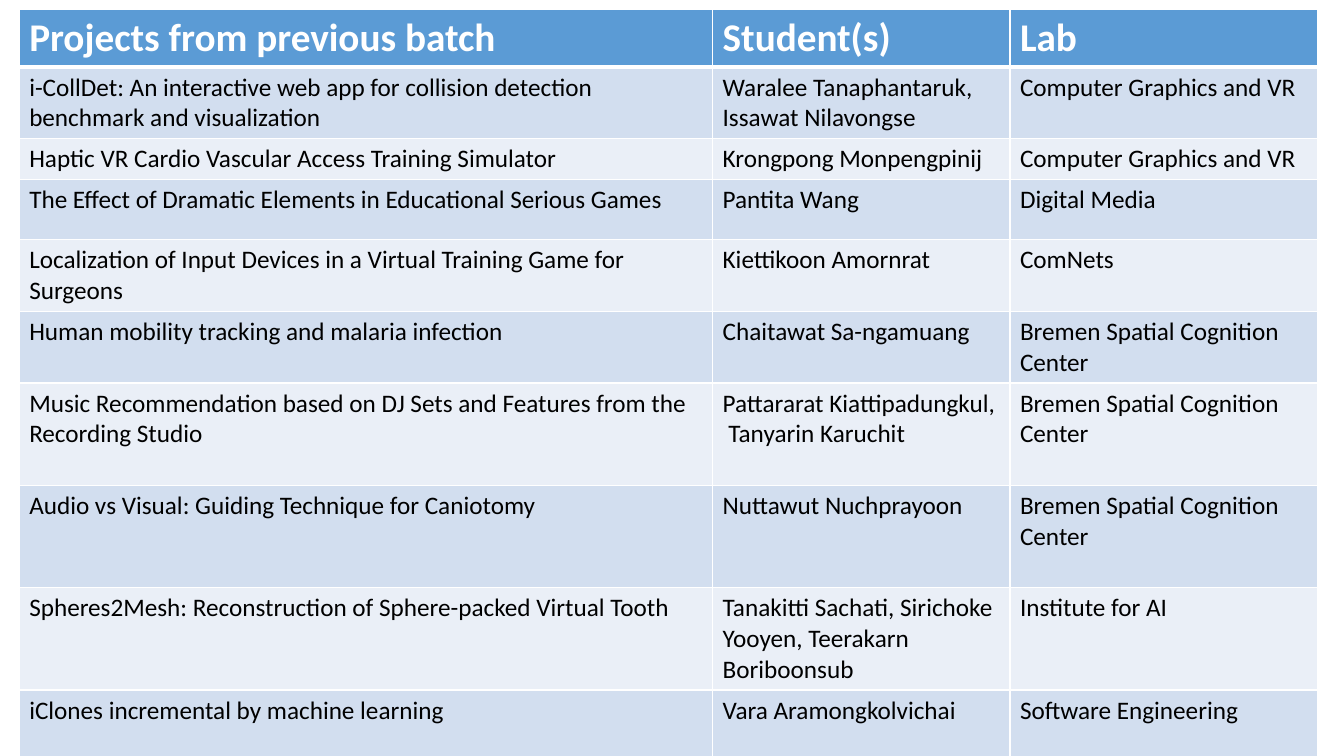
from typing import NamedTuple

from lxml.etree import SubElement
from pptx import Presentation
from pptx.dml.color import RGBColor
from pptx.oxml.ns import qn
from pptx.util import Inches, Pt

WIDTH, HEIGHT = 13.33, 7.5
LEFT, TOP = 0.19, 0.09
SPAN = 12.88
SHARES = (0.534, 0.229, 0.237)
LINE, PAD = 0.305, 0.1  # one text line, and cell margins per row
WHITE, BLACK, BLUE = "FFFFFF", "000000", "5B9BD5"
BANDS = ("D2DEEF", "EAEFF7")


class Project(NamedTuple):
    title: str
    students: str
    lab: str
    lines: float  # row height in text lines


class Look(NamedTuple):
    fill: str
    ink: str
    size: int
    bold: bool
    above: int
    below: int


HEAD = Project("Projects from previous batch", "Student(s)", "Lab", 1.53)
GRAPHICS = "Computer Graphics and VR"
SPATIAL = "Bremen Spatial Cognition Center"
PROJECTS = [
    Project("i-CollDet: An interactive web app for collision detection "
            "benchmark and visualization",
            "Waralee Tanaphantaruk, Issawat Nilavongse", GRAPHICS, 2),
    Project("Haptic VR Cardio Vascular Access Training Simulator",
            "Krongpong Monpengpinij", GRAPHICS, 1),
    Project("The Effect of Dramatic Elements in Educational Serious Games",
            "Pantita Wang", "Digital Media", 1.63),
    Project("Localization of Input Devices in a Virtual Training Game for "
            "Surgeons", "Kiettikoon Amornrat", "ComNets", 2),
    Project("Human mobility tracking and malaria infection",
            "Chaitawat Sa-ngamuang", SPATIAL, 2),
    Project("Music Recommendation based on DJ Sets and Features from the "
            "Recording Studio",
            "Pattararat Kiattipadungkul,  Tanyarin Karuchit", SPATIAL, 3),
    Project("Audio vs Visual: Guiding Technique for Caniotomy",
            "Nuttawut Nuchprayoon", SPATIAL, 3),
    Project("Spheres2Mesh: Reconstruction of Sphere-packed Virtual Tooth",
            "Tanakitti Sachati, Sirichoke Yooyen, Teerakarn Boriboonsub",
            "Institute for AI", 3),
    Project("iClones incremental by machine learning",
            "Vara Aramongkolvichai", "Software Engineering", 2.1),
]


def color(code: str) -> RGBColor:
    return RGBColor.from_string(code)


def border(cell, side: str, points: int) -> None:
    props = cell._tc.get_or_add_tcPr()
    line = SubElement(props, qn(f"a:ln{side}"), w=str(Pt(points)))
    fill = SubElement(line, qn("a:solidFill"))
    SubElement(fill, qn("a:srgbClr"), val=WHITE)


def paint(cell, text: str, look: Look) -> None:
    for side, points in zip("LRTB", (1, 1, look.above, look.below)):
        border(cell, side, points)
    cell.fill.solid()
    cell.fill.fore_color.rgb = color(look.fill)
    cell.text = text
    font = cell.text_frame.paragraphs[0].font
    font.name, font.size, font.bold = "Calibri", Pt(look.size), look.bold
    font.color.rgb = color(look.ink)


def style(index: int) -> Look:
    if index == 0:
        return Look(BLUE, WHITE, 28, True, 1, 3)
    above = 3 if index == 1 else 1
    return Look(BANDS[(index - 1) % 2], BLACK, 18, False, above, 1)


def main() -> None:
    deck = Presentation()
    deck.slide_width, deck.slide_height = Inches(WIDTH), Inches(HEIGHT)
    slide = deck.slides.add_slide(deck.slide_layouts[6])

    # Table frame and columns
    rows = [HEAD, *PROJECTS]
    tall = [row.lines * LINE + PAD for row in rows]
    table = slide.shapes.add_table(
        len(rows), len(SHARES), Inches(LEFT), Inches(TOP),
        Inches(SPAN), Inches(sum(tall))).table
    for column, share in zip(table.columns, SHARES):
        column.width = Inches(SPAN * share)

    # Header and project rows
    for index, row in enumerate(rows):
        table.rows[index].height = Inches(tall[index])
        for cell, text in zip(table.rows[index].cells, row[:3]):
            paint(cell, text, style(index))

    deck.save("out.pptx")


if __name__ == "__main__":
    main()
